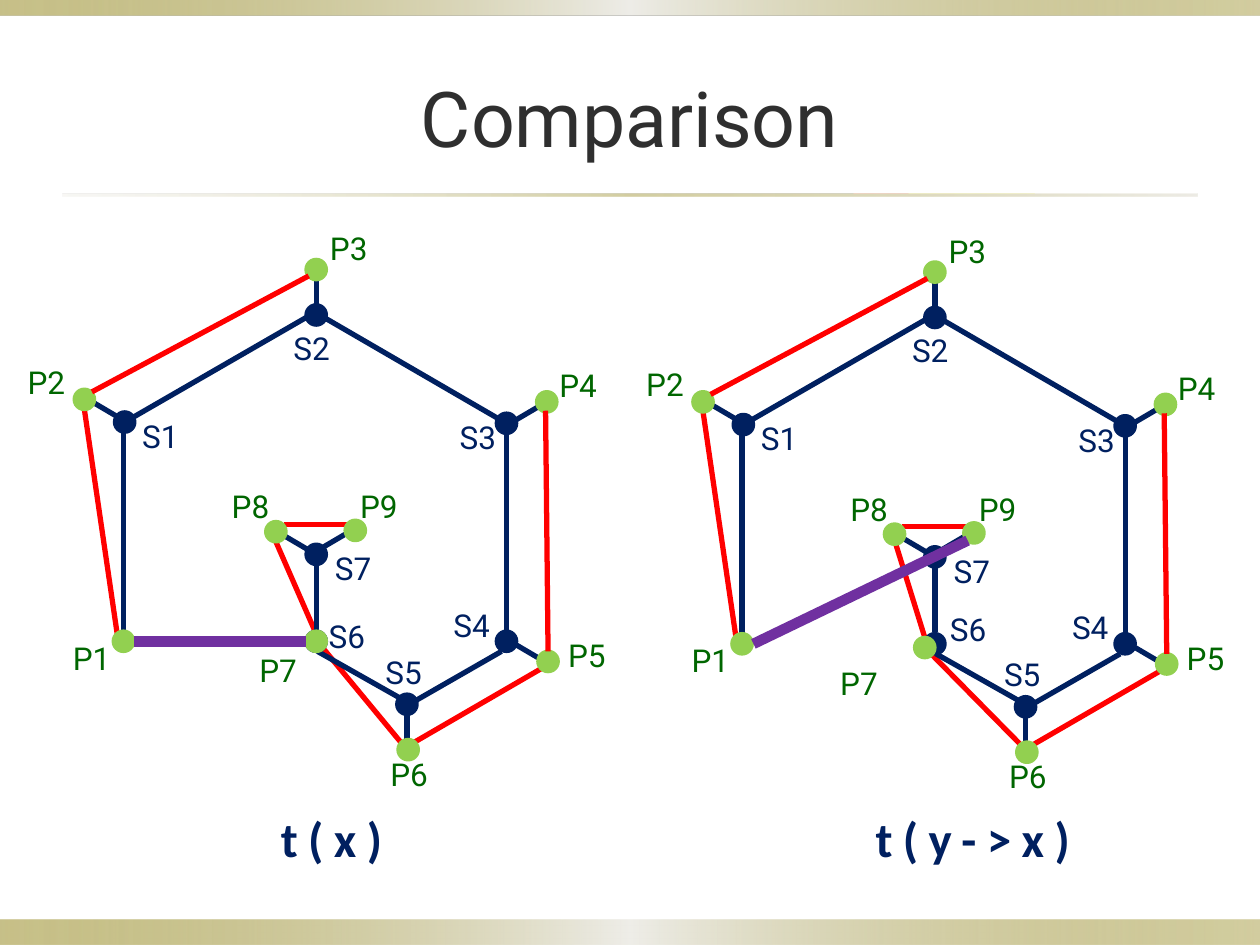
from typing import NamedTuple

from lxml.etree import SubElement
from pptx import Presentation
from pptx.dml.color import RGBColor
from pptx.enum.shapes import MSO_CONNECTOR, MSO_SHAPE
from pptx.enum.text import MSO_ANCHOR, PP_ALIGN
from pptx.oxml.ns import qn
from pptx.util import Inches, Pt

COLORS = {
    "title": "2F2F2F", "gold": "918415", "silver": "EEEDE8", "sand": "DCD9CC",
    "skeleton": "002060", "path": "FF0000", "point": "92D050",
    "point_label": "006600", "closing": "7030A0",
}
NODE_SIZE = 0.16
LABEL_SIZE = (0.55, 0.4)


class Edge(NamedTuple):
    x1: float
    y1: float
    x2: float
    y2: float
    color: str
    width: float = 3


class Node(NamedTuple):
    left: float
    top: float
    color: str


class Label(NamedTuple):
    text: str
    left: float
    top: float


class Stop(NamedTuple):
    position: int
    color: str
    opacity: int


class Band(NamedTuple):
    left: float
    top: float
    width: float
    height: float
    stops: list[Stop]


class Diagram(NamedTuple):
    """The parts in which one diagram differs from the other."""
    shift_x: float
    shift_y: float
    p7: Node
    p7_label: Label
    s6_label: Label
    p7_edges: list[Edge]
    closing_edge: Edge
    caption: str
    caption_left: float
    caption_width: float


BAR_STOPS = [Stop(0, "gold", 50), Stop(50, "silver", 100), Stop(100, "gold", 40)]
RULE_STOPS = [Stop(0, "sand", 20), Stop(50, "gold", 40), Stop(100, "sand", 50)]
BANDS = [
    Band(0, 7.3, 10, 0.2, BAR_STOPS),
    Band(0, 0, 10, 0.12, BAR_STOPS),
    Band(0.5, 1.54, 9, 0.02, RULE_STOPS),
]

PATH_EDGES = [Edge(*ends, "path") for ends in [
    (3.29, 5.89, 4.29, 5.31), (2.25, 4.16, 2.77, 4.16), (0.93, 5.03, 0.67, 3.25),
]]
SKELETON_EDGES = [Edge(*ends, "skeleton") for ends in [
    (0.98, 5.01, 0.98, 3.43), (3.95, 3.32, 2.59, 2.53), (1.06, 3.31, 2.43, 2.52),
    (4.02, 5.01, 4.02, 3.43), (3.98, 5.17, 3.3, 5.56), (2.52, 5.17, 3.21, 5.56),
    (2.51, 5, 2.51, 4.47), (2.51, 2.42, 2.51, 2.22), (0.92, 3.3, 0.75, 3.2),
    (3.23, 5.87, 3.23, 5.67), (4.27, 5.22, 4.1, 5.12), (4.1, 3.33, 4.27, 3.23),
    (2.57, 4.34, 2.74, 4.24), (2.44, 4.36, 2.27, 4.26),
]]
FRONT_EDGES = [Edge(*ends, "path") for ends in [
    (0.73, 3.11, 2.45, 2.19), (4.33, 3.26, 4.35, 5.17),
]]
NODES = [Node(left, top, "skeleton") for left, top in [
    (2.43, 2.42), (0.91, 3.27), (3.94, 3.28), (3.94, 5.01),
    (3.15, 5.51), (2.43, 5.01), (2.43, 4.32),
]] + [Node(left, top, "point") for left, top in [
    (0.9, 5.01), (0.59, 3.09), (2.43, 2.06), (4.26, 3.11),
    (4.27, 5.17), (3.16, 5.87), (2.11, 4.14), (2.74, 4.13),
]]
LABELS = [
    Label("P1", 0.48, 5.02), Label("P2", 0.12, 2.83), Label("P3", 2.52, 1.77),
    Label("P4", 4.34, 2.86), Label("P5", 4.41, 5), Label("P6", 3, 5.94),
    Label("P8", 1.74, 3.82), Label("P9", 2.76, 3.82), Label("S1", 1.03, 3.26),
    Label("S2", 2.23, 2.56), Label("S3", 3.55, 3.27), Label("S4", 3.5, 4.76),
    Label("S5", 2.96, 5.13), Label("S7", 2.56, 4.31),
]
DIAGRAMS = [
    Diagram(
        0, 0, Node(2.43, 5.01, "point"),
        Label("P7", 1.96, 5.12), Label("S6", 2.51, 4.85),
        [Edge(2.56, 5.14, 3.18, 5.89, "path"), Edge(2.19, 4.3, 2.5, 5.01, "path")],
        Edge(1.06, 5.09, 2.43, 5.09, "closing", 6), "t(x)", 2.13, 1.11,
    ),
    Diagram(
        4.91, 0.02, Node(2.35, 5.04, "point"),
        Label("P7", 1.66, 5.2), Label("S6", 2.53, 4.77),
        [Edge(2.49, 5.18, 3.19, 5.89, "path"), Edge(2.2, 4.3, 2.43, 5.04, "path")],
        Edge(1.07, 5.09, 2.77, 4.27, "closing", 6), "t(y->x)", 6.85, 1.89,
    ),
]


def rgb(name: str) -> RGBColor:
    return RGBColor.from_string(COLORS[name])


def add_band(shapes, band: Band) -> None:
    shape = shapes.add_shape(MSO_SHAPE.RECTANGLE, *map(Inches, band[:4]))
    shape.shadow.inherit = False
    shape.line.fill.background()
    shape.fill.gradient()
    shape.fill.gradient_angle = 0
    stop_list = shape._element.spPr.find(qn("a:gradFill")).find(qn("a:gsLst"))
    for old_stop in list(stop_list):
        stop_list.remove(old_stop)
    for stop in band.stops:
        gradient_stop = SubElement(stop_list, qn("a:gs"), pos=str(stop.position * 1000))
        color = SubElement(gradient_stop, qn("a:srgbClr"), val=COLORS[stop.color])
        SubElement(color, qn("a:alpha"), val=str(stop.opacity * 1000))


def add_edge(shapes, edge: Edge, dx: float, dy: float) -> None:
    connector = shapes.add_connector(
        MSO_CONNECTOR.STRAIGHT, Inches(edge.x1 + dx), Inches(edge.y1 + dy),
        Inches(edge.x2 + dx), Inches(edge.y2 + dy))
    connector.line.color.rgb = rgb(edge.color)
    connector.line.width = Pt(edge.width)
    SubElement(connector._element.spPr, qn("a:effectLst"))


def add_node(shapes, node: Node, dx: float, dy: float) -> None:
    shape = shapes.add_shape(
        MSO_SHAPE.FLOWCHART_CONNECTOR, Inches(node.left + dx), Inches(node.top + dy),
        Inches(NODE_SIZE), Inches(NODE_SIZE))
    shape.shadow.inherit = False
    shape.fill.solid()
    shape.fill.fore_color.rgb = rgb(node.color)
    shape.line.color.rgb = rgb(node.color)
    shape.line.width = Pt(2)


def add_text(shapes, text: str, left: float, top: float, width: float, height: float,
             size: float, color: str, font: str = "Roboto"):
    """Add a one-line text box and return its text frame and run."""
    text_box = shapes.add_textbox(Inches(left), Inches(top), Inches(width), Inches(height))
    frame = text_box.text_frame
    frame.word_wrap = True
    run = frame.paragraphs[0].add_run()
    run.text = text
    run.font.size = Pt(size)
    run.font.name = font
    run.font.color.rgb = rgb(color)
    return frame, run


def add_diagram(slide, diagram: Diagram) -> None:
    shapes = slide.shapes.add_group_shape().shapes
    dx, dy = diagram.shift_x, diagram.shift_y
    for edge in PATH_EDGES + diagram.p7_edges + SKELETON_EDGES:
        add_edge(shapes, edge, dx, dy)
    for node in NODES + [diagram.p7]:
        add_node(shapes, node, dx, dy)
    for edge in [diagram.closing_edge] + FRONT_EDGES:
        add_edge(shapes, edge, dx, dy)
    for label in LABELS + [diagram.p7_label, diagram.s6_label]:
        color = "point_label" if label.text.startswith("P") else "skeleton"
        add_text(shapes, label.text, label.left + dx, label.top + dy, *LABEL_SIZE, 18, color)
    _, run = add_text(slide.shapes, diagram.caption, diagram.caption_left, 6.37,
                      diagram.caption_width, 0.57, 28, "skeleton", "Calibri")
    run.font.bold = True
    run.font._element.set("spc", "600")


def main() -> None:
    presentation = Presentation()
    presentation.slide_width, presentation.slide_height = Inches(10), Inches(7.5)
    slide = presentation.slides.add_slide(presentation.slide_layouts[6])
    for band in BANDS:
        add_band(slide.shapes, band)
    frame, _ = add_text(slide.shapes, "Comparison", 0.5, 0.3, 9, 1.25, 44, "title")
    frame.vertical_anchor = MSO_ANCHOR.MIDDLE
    frame.paragraphs[0].alignment = PP_ALIGN.CENTER
    for diagram in DIAGRAMS:
        add_diagram(slide, diagram)
    presentation.save("out.pptx")


if __name__ == "__main__":
    main()
